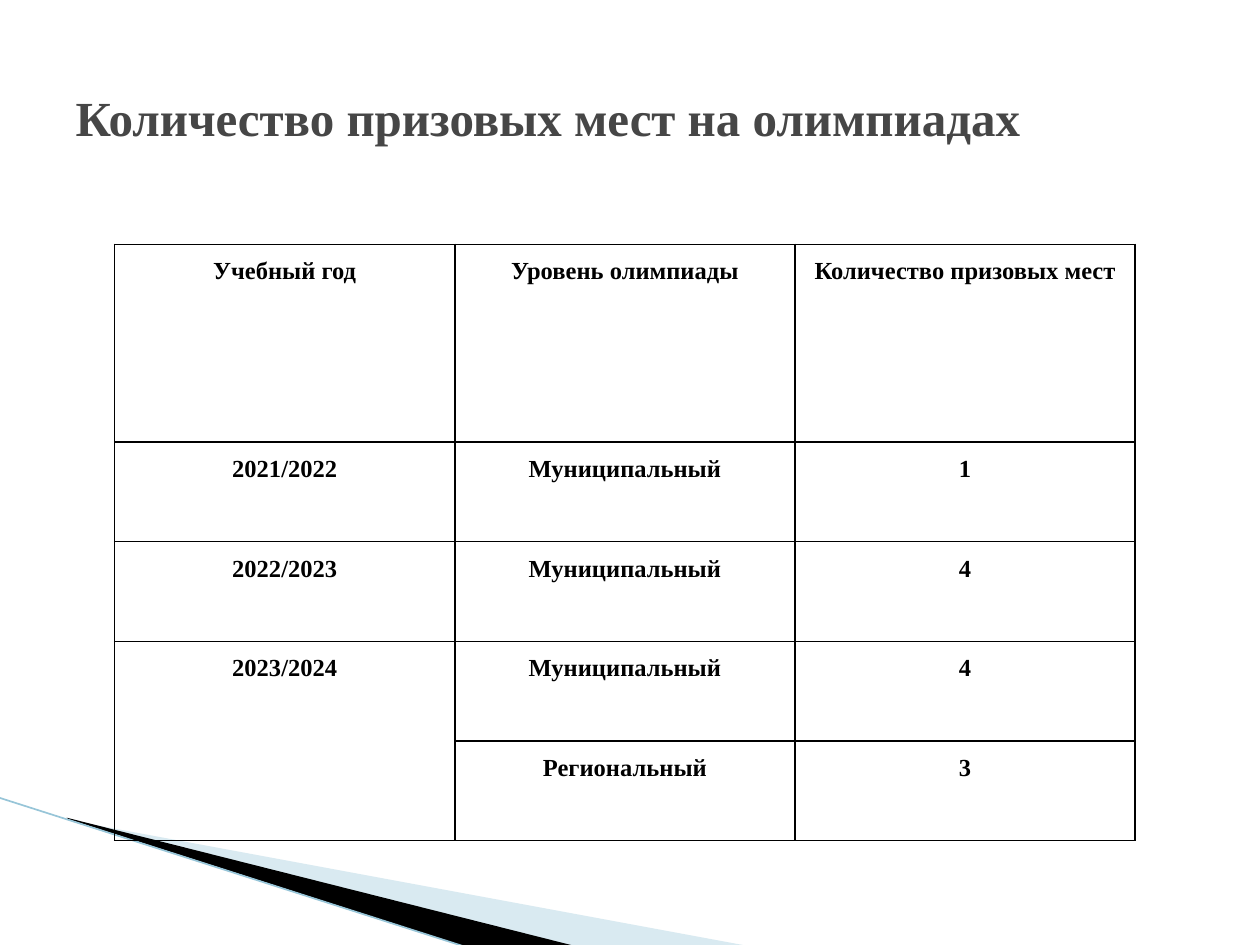
"""Build a slide with a table of prize places won at school olympiads."""
from dataclasses import dataclass

import lxml.etree
import pptx
import pptx.dml.color
import pptx.enum.shapes
import pptx.enum.text
import pptx.oxml.ns
import pptx.util

Inches = pptx.util.Inches
Pt = pptx.util.Pt
qn = pptx.oxml.ns.qn

FONT = "Times New Roman"
COLORS = {
    "title": "464646",
    "ink": "000000",
    "light_wedge": "A0CBDC",
    "dark_wedge": "000000",
    "edge": "97C5D8",
}


@dataclass(frozen=True)
class Wedge:
    """A filled outline decorating the lower left corner."""

    points: tuple[tuple[float, float], ...]
    color: str
    opacity: int = 100


WEDGES = (
    Wedge(((0.55, 6.51), (5.95, 7.51), (4.56, 7.51), (0.55, 6.5)), "light_wedge", 40),
    Wedge(((0.53, 6.49), (4.57, 7.51), (3.72, 7.52), (0.54, 6.5)), "dark_wedge"),
)
ROWS = (
    ("Учебный год", "Уровень олимпиады", "Количество призовых мест"),
    ("2021/2022", "Муниципальный", "1"),
    ("2022/2023", "Муниципальный", "4"),
    ("2023/2024", "Муниципальный", "4"),
    ("", "Региональный", "3"),
)
ROW_HEIGHTS = (1.57, 0.79, 0.79, 0.79, 0.79)
COLUMN_WIDTH = 2.7


def rgb(name: str) -> pptx.dml.color.RGBColor:
    """Return the named colour."""
    return pptx.dml.color.RGBColor.from_string(COLORS[name])


def format_font(paragraph, size: float, color: str) -> None:
    """Set the bold slide typeface on a paragraph."""
    font = paragraph.font
    font.name = FONT
    font.size = Pt(size)
    font.bold = True
    font.color.rgb = rgb(color)


def add_wedge(slide, wedge: Wedge) -> None:
    """Draw one wedge without outline or shadow."""
    points = [(Inches(x), Inches(y)) for x, y in wedge.points]
    builder = slide.shapes.build_freeform(*points[0])
    builder.add_line_segments(points[1:], close=True)
    shape = builder.convert_to_shape()
    shape.shadow.inherit = False
    shape.line.fill.background()
    shape.fill.solid()
    shape.fill.fore_color.rgb = rgb(wedge.color)
    if wedge.opacity < 100:
        color = shape._element.spPr.find(".//" + qn("a:srgbClr"))
        lxml.etree.SubElement(color, qn("a:alpha"), val=str(wedge.opacity * 1000))


def add_edge(slide) -> None:
    """Draw the thin line along the wedges."""
    edge = slide.shapes.add_connector(
        pptx.enum.shapes.MSO_CONNECTOR.STRAIGHT,
        Inches(-0.01), Inches(6.33), Inches(3.71), Inches(7.52),
    )
    edge.line.color.rgb = rgb("edge")
    edge.line.width = Pt(0.95)
    lxml.etree.SubElement(edge._element.spPr, qn("a:effectLst"))


def add_borders(cell) -> None:
    """Give all four sides of a cell a one-point line."""
    properties = cell._tc.get_or_add_tcPr()
    for index, side in enumerate(("a:lnL", "a:lnR", "a:lnT", "a:lnB")):
        line = lxml.etree.Element(qn(side), w=str(Pt(1)))
        fill = lxml.etree.SubElement(line, qn("a:solidFill"))
        lxml.etree.SubElement(fill, qn("a:srgbClr"), val=COLORS["ink"])
        properties.insert(index, line)


def format_cell(cell, text: str) -> None:
    """Write and style one table cell."""
    cell.text = text
    cell.fill.background()
    cell.margin_left = cell.margin_right = Inches(0.07)
    cell.margin_top = cell.margin_bottom = 0
    paragraph = cell.text_frame.paragraphs[0]
    paragraph.alignment = pptx.enum.text.PP_ALIGN.CENTER
    paragraph.line_spacing = 1.5
    format_font(paragraph, 14, "ink")
    add_borders(cell)


def add_results(slide) -> None:
    """Add the table of results with the last year spanning two rows."""
    columns = len(ROWS[0])
    table = slide.shapes.add_table(
        len(ROWS), columns, Inches(0.91), Inches(1.94),
        Inches(COLUMN_WIDTH * columns), Inches(sum(ROW_HEIGHTS)),
    ).table
    table.first_row = table.horz_banding = False
    for column in table.columns:
        column.width = Inches(COLUMN_WIDTH)
    for row, height, texts in zip(table.rows, ROW_HEIGHTS, ROWS):
        row.height = Inches(height)
        for cell, text in zip(row.cells, texts):
            format_cell(cell, text)
    table.cell(3, 0).merge(table.cell(4, 0))


def set_title(slide) -> None:
    """Fill and place the title placeholder."""
    title = slide.shapes.title
    title.left, title.top = Inches(0.5), Inches(0.3)
    title.width, title.height = Inches(9), Inches(1.25)
    title.text_frame.text = "Количество призовых мест на олимпиадах"
    title.text_frame.vertical_anchor = pptx.enum.text.MSO_ANCHOR.MIDDLE
    paragraph = title.text_frame.paragraphs[0]
    paragraph.alignment = pptx.enum.text.PP_ALIGN.LEFT
    format_font(paragraph, 28, "title")


def main() -> None:
    """Build and save the presentation."""
    presentation = pptx.Presentation()
    presentation.slide_width = Inches(10)
    presentation.slide_height = Inches(7.5)
    slide = presentation.slides.add_slide(presentation.slide_layouts[5])
    for wedge in WEDGES:
        add_wedge(slide, wedge)
    add_edge(slide)
    add_results(slide)
    set_title(slide)
    presentation.save("out.pptx")


if __name__ == "__main__":
    main()
